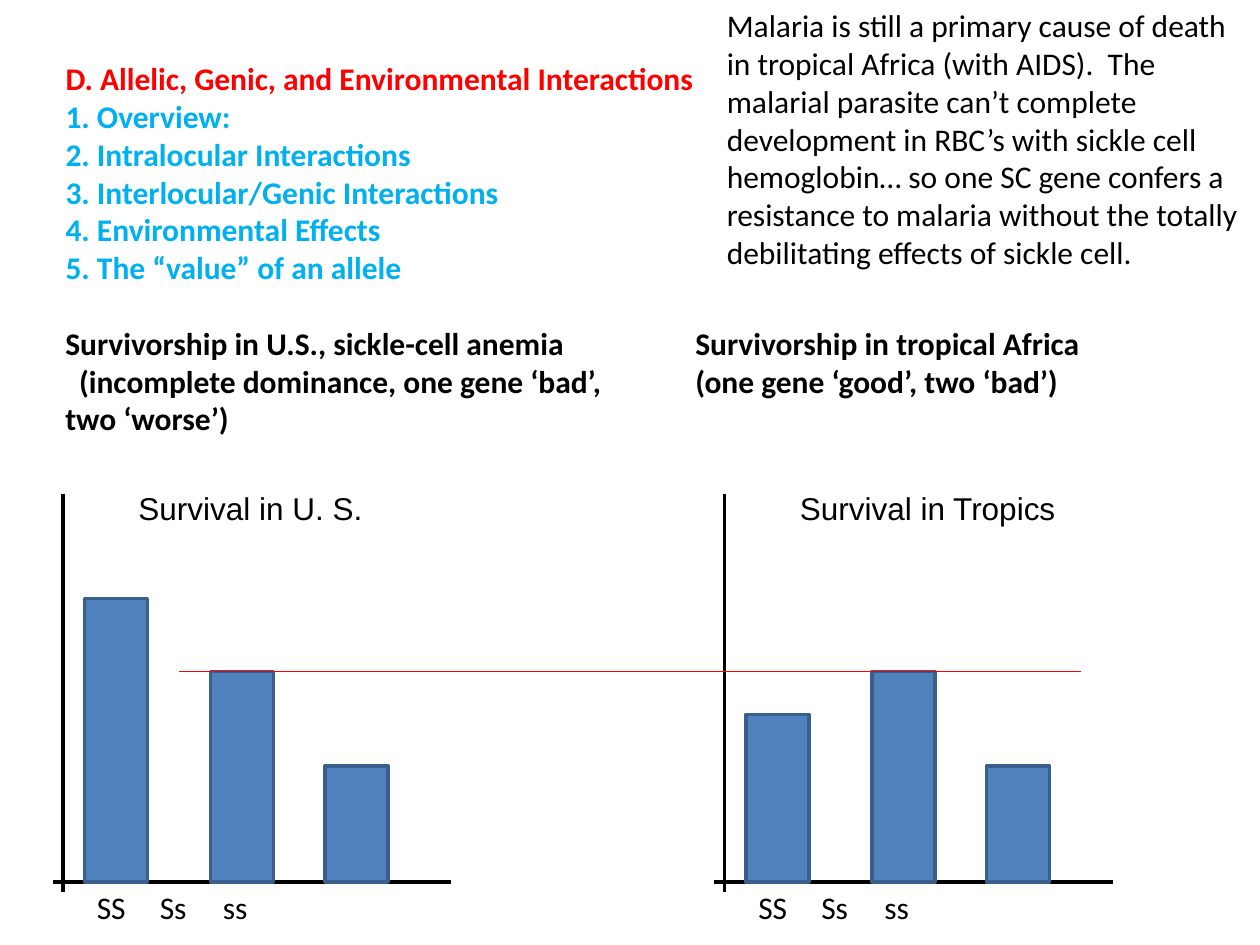
from dataclasses import dataclass

from lxml import etree
from pptx import Presentation
from pptx.dml.color import RGBColor
from pptx.enum.shapes import MSO_CONNECTOR, MSO_SHAPE
from pptx.enum.text import MSO_ANCHOR, MSO_AUTO_SIZE, PP_ALIGN
from pptx.oxml.ns import qn
from pptx.util import Inches, Pt

STRAIGHT = MSO_CONNECTOR.STRAIGHT
RECTANGLE = MSO_SHAPE.RECTANGLE
TOP = MSO_ANCHOR.TOP
LEFT = PP_ALIGN.LEFT
NO_AUTOFIT = MSO_AUTO_SIZE.NONE


@dataclass(frozen=True)
class Theme:
    black: RGBColor = RGBColor(0x00, 0x00, 0x00)
    red: RGBColor = RGBColor(0xFF, 0x00, 0x00)
    topic: RGBColor = RGBColor(0x00, 0xB0, 0xF0)
    bar: RGBColor = RGBColor(0x4F, 0x81, 0xBD)
    bar_edge: RGBColor = RGBColor(0x3A, 0x5F, 0x8C)
    body_font: str = "Calibri"
    chart_font: str = "Arial"
    size: float = 18
    axis_width: float = 2.25
    edge_width: float = 2
    reference_width: float = 0.75


@dataclass(frozen=True)
class Survival:
    """One survival diagram; x is the left end of its horizontal axis."""
    title: str
    x: float
    title_width: float
    heights: tuple[float, ...]


THEME = Theme()
TOPICS = [
    "1. Overview:",
    "2. Intralocular Interactions",
    "3. Interlocular/Genic Interactions",
    "4. Environmental Effects",
    "5. The “value” of an allele",
]
MALARIA = (
    "Malaria is still a primary cause of death in tropical Africa (with AIDS).  "
    "The malarial parasite can’t complete development in RBC’s with sickle cell "
    "hemoglobin… so one SC gene confers a resistance to malaria without the "
    "totally debilitating effects of sickle cell."
)
US_NOTE = [
    "Survivorship in U.S., sickle-cell anemia",
    "(incomplete dominance, one gene ‘bad’,",
    "two ‘worse’)",
]
AFRICA_NOTE = ["Survivorship in tropical Africa", "(one gene ‘good’, two ‘bad’)"]
DIAGRAMS = [
    Survival("Survival in U. S.", 0.42, 3.08, (2.25, 1.67, 0.92)),
    Survival("Survival in Tropics", 5.67, 2.83, (1.33, 1.67, 0.92)),
]
GENOTYPES = "SS\tSs\tss"
BAR_OFFSETS = (0.25, 1.25, 2.16)
BAR_WIDTH = 0.5
BASELINE = 7
AXIS_TOP = 3.92
REFERENCE_Y = 5.33


def write(s, lines: list[str], color: RGBColor = THEME.black,
          bold: bool = False, font: str = THEME.body_font) -> None:
    """Fill a text box or placeholder with plain left-aligned lines."""
    tf = s.text_frame
    tf.word_wrap = True
    tf.auto_size = NO_AUTOFIT
    tf.vertical_anchor = TOP
    for i, line in enumerate(lines):
        p = tf.paragraphs[0] if i == 0 else tf.add_paragraph()
        p.text = line
        p.alignment = LEFT
        p.space_before = Pt(0)
        p.font.name = font
        p.font.size = Pt(THEME.size)
        p.font.bold = bold
        p.font.color.rgb = color


def place(s, x: float, y: float, w: float, h: float) -> None:
    s.left, s.top, s.width, s.height = map(Inches, (x, y, w, h))


def add_text(slide, x: float, y: float, w: float, h: float, lines: list[str], **style):
    s = slide.shapes.add_textbox(Inches(x), Inches(y), Inches(w), Inches(h))
    write(s, lines, **style)
    return s


def add_line(slide, x1: float, y1: float, x2: float, y2: float,
             color: RGBColor, width: float) -> None:
    s = slide.shapes.add_connector(STRAIGHT, *map(Inches, (x1, y1, x2, y2)))
    s.line.color.rgb = color
    s.line.width = Pt(width)
    etree.SubElement(s._element.spPr, qn("a:effectLst"))


def add_bar(slide, x: float, height: float) -> None:
    s = slide.shapes.add_shape(
        RECTANGLE, *map(Inches, (x, BASELINE - height, BAR_WIDTH, height)))
    s.shadow.inherit = False
    s.fill.solid()
    s.fill.fore_color.rgb = THEME.bar
    s.line.color.rgb = THEME.bar_edge
    s.line.width = Pt(THEME.edge_width)


def add_diagram(slide, d: Survival) -> None:
    axis_x = d.x + 0.08
    add_line(slide, axis_x, AXIS_TOP, axis_x, BASELINE + 0.08, THEME.black, THEME.axis_width)
    add_line(slide, d.x, BASELINE, d.x + 3.16, BASELINE, THEME.black, THEME.axis_width)
    add_text(slide, d.x + 0.25, BASELINE, 3.67, 0.4, [GENOTYPES])
    for offset, height in zip(BAR_OFFSETS, d.heights):
        add_bar(slide, d.x + offset, height)
    add_text(slide, d.x + 0.58, 3.83, d.title_width, 0.4, [d.title], font=THEME.chart_font)


def add_outline(slide) -> None:
    title, body = slide.placeholders
    place(title, 0.42, 0.42, 5.3, 0.4)
    write(title, ["D. Allelic, Genic, and Environmental Interactions"], THEME.red, bold=True)
    place(body, 0.42, 0.72, 5.2, 1.6)
    write(body, TOPICS, THEME.topic, bold=True)
    for p in body.text_frame.paragraphs:
        pPr = p._p.get_or_add_pPr()
        pPr.set("marL", "0")
        pPr.set("indent", "0")
        pPr.insert_element_before(etree.Element(qn("a:buNone")), "a:tabLst", "a:defRPr")


def main() -> None:
    prs = Presentation()
    prs.slide_width, prs.slide_height = Inches(10), Inches(7.5)
    slide = prs.slides.add_slide(prs.slide_layouts[1])

    add_outline(slide)
    add_text(slide, 5.67, 0, 4.33, 2.22, [MALARIA])
    us = add_text(slide, 0.42, 2.52, 4.9, 1.01, US_NOTE, bold=True)
    us.text_frame.paragraphs[1]._p.get_or_add_pPr().set("indent", str(Inches(0.11)))
    add_text(slide, 5.42, 2.52, 4.17, 0.71, AFRICA_NOTE, bold=True)

    for diagram in DIAGRAMS:
        add_diagram(slide, diagram)
    add_line(slide, 1.42, REFERENCE_Y, 8.58, REFERENCE_Y, THEME.red, THEME.reference_width)

    prs.save("out.pptx")


if __name__ == "__main__":
    main()
